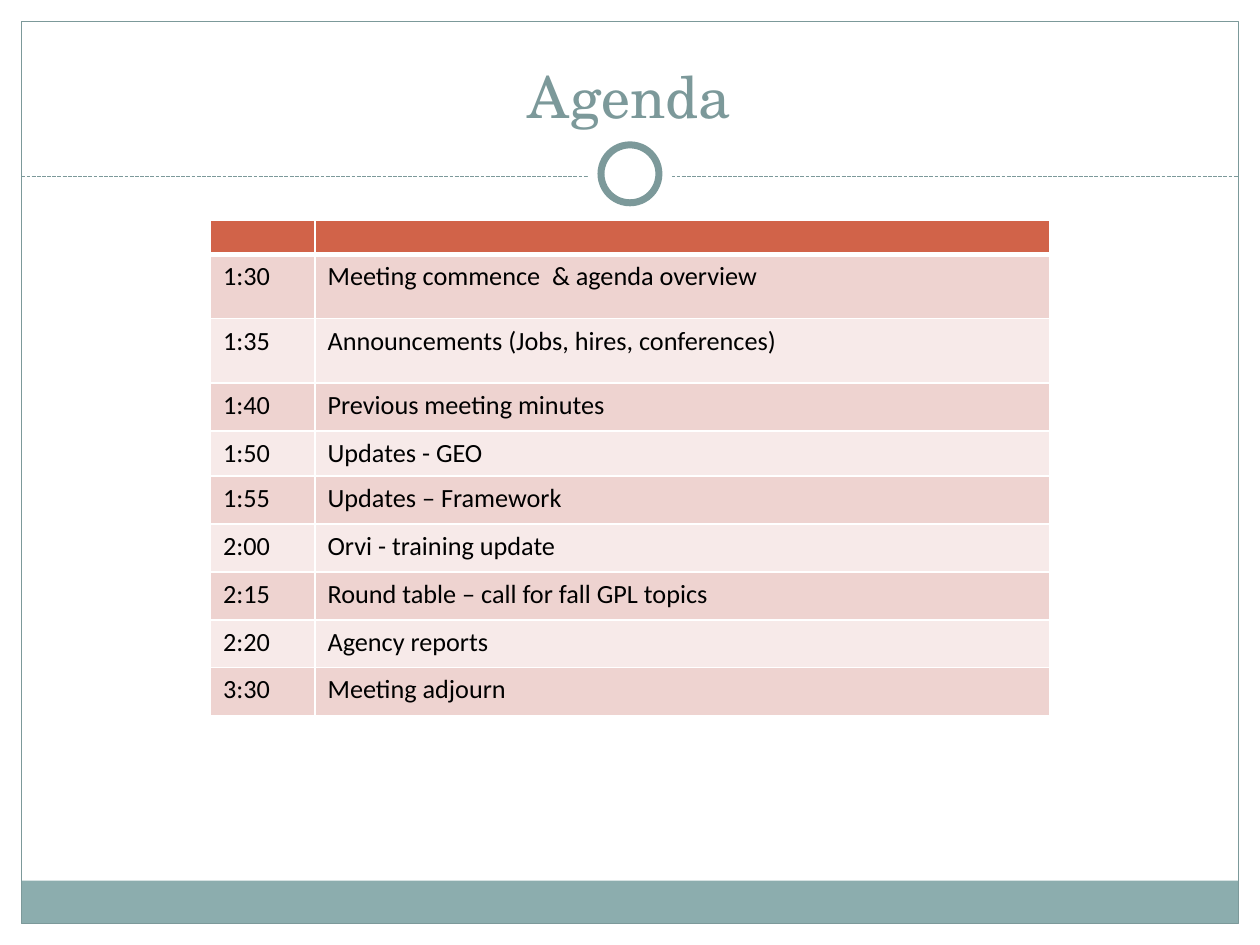
import pptx
import pptx.dml.color
import pptx.enum.dml
import pptx.enum.shapes
import pptx.enum.text
import pptx.oxml.ns
import pptx.util
from lxml import etree
from pptx.util import Inches

TITLE = "Agenda"
AGENDA = [
    ("1:30", "Meeting commence  & agenda overview"),
    ("1:35", "Announcements (Jobs, hires, conferences)"),
    ("1:40", "Previous meeting minutes"),
    ("1:50", "Updates - GEO"),
    ("1:55", "Updates – Framework"),
    ("2:00", "Orvi - training update"),
    ("2:15", "Round table – call for fall GPL topics"),
    ("2:20", "Agency reports"),
    ("3:30", "Meeting adjourn"),
]
HEADER_HEIGHT, ROW_HEIGHT = 0.27, 0.38
SPECIAL_HEIGHTS = {"1:30": 0.51, "1:35": 0.51, "1:50": 0.36}
COLUMN_WIDTHS = (0.83, 5.83)
TABLE_LEFT, TABLE_TOP = 1.67, 1.75

SLIDE_WIDTH, SLIDE_HEIGHT = 10, 7.5
MARGIN = 0.17
RULE_Y = 1.4
FOOTER_HEIGHT = 0.34
RING_CENTER_Y = 1.38

THEME = {
    "accent": "7C999A", "footer": "8CADAE", "paper": "FFFFFF", "ink": "000000",
    "header": "D16349", "bands": ("EED3D0", "F7EAE9"),
    "title_font": "TeX Gyre Schola", "body_font": "Calibri",
    "title_size": 33, "body_size": 15, "header_size": 10,
    "thin": 0.75, "ring": 4, "cell_line": 1, "header_line": 3,
}


def rgb(value):
    return pptx.dml.color.RGBColor.from_string(value)


def write(frame, text, *, font, size, color, align=None):
    paragraph = frame.paragraphs[0]
    paragraph.alignment = align
    run = paragraph.add_run()
    run.text = text
    run.font.name = font
    run.font.size = pptx.util.Pt(size)
    run.font.color.rgb = rgb(color)


def add_shape(slide, kind, left, top, width, height, fill=None, line=None, weight=None):
    shape = slide.shapes.add_shape(kind, *map(Inches, (left, top, width, height)))
    shape.shadow.inherit = False
    if fill:
        shape.fill.solid()
        shape.fill.fore_color.rgb = rgb(fill)
    else:
        shape.fill.background()
    if line:
        shape.line.color.rgb = rgb(line)
        shape.line.width = pptx.util.Pt(weight)
    else:
        shape.line.fill.background()


def add_rule(slide):
    rule = slide.shapes.add_connector(
        pptx.enum.shapes.MSO_CONNECTOR.STRAIGHT, Inches(MARGIN), Inches(RULE_Y),
        Inches(SLIDE_WIDTH - MARGIN), Inches(RULE_Y))
    rule.line.color.rgb = rgb(THEME["accent"])
    rule.line.width = pptx.util.Pt(THEME["thin"])
    rule.line.dash_style = pptx.enum.dml.MSO_LINE.SQUARE_DOT
    etree.SubElement(rule._element.spPr, pptx.oxml.ns.qn("a:effectLst"))


def add_frame(slide):
    shapes = pptx.enum.shapes.MSO_SHAPE
    inner_width = SLIDE_WIDTH - 2 * MARGIN
    inner_height = SLIDE_HEIGHT - 2 * MARGIN
    add_shape(slide, shapes.RECTANGLE, MARGIN, SLIDE_HEIGHT - MARGIN - FOOTER_HEIGHT,
              inner_width, FOOTER_HEIGHT, fill=THEME["footer"])
    add_shape(slide, shapes.RECTANGLE, MARGIN, MARGIN, inner_width, inner_height,
              line=THEME["accent"], weight=THEME["thin"])
    add_rule(slide)
    for diameter, line in ((0.67, None), (0.46, THEME["accent"])):
        add_shape(slide, shapes.OVAL, (SLIDE_WIDTH - diameter) / 2,
                  RING_CENTER_Y - diameter / 2, diameter, diameter,
                  fill=THEME["paper"], line=line, weight=THEME["ring"])


def style_cell(cell, fill, top, bottom):
    """Set the borders, then the fill, in the order the file format asks for."""
    qn = pptx.oxml.ns.qn
    properties = cell._tc.get_or_add_tcPr()
    side = THEME["cell_line"]
    for tag, weight in (("a:lnL", side), ("a:lnR", side), ("a:lnT", top), ("a:lnB", bottom)):
        line = etree.SubElement(properties, qn(tag), w=str(pptx.util.Pt(weight)))
        solid = etree.SubElement(line, qn("a:solidFill"))
        etree.SubElement(solid, qn("a:srgbClr"), val=THEME["paper"])
    cell.fill.solid()
    cell.fill.fore_color.rgb = rgb(fill)


def add_agenda(slide):
    heights = [HEADER_HEIGHT] + [SPECIAL_HEIGHTS.get(time, ROW_HEIGHT) for time, _ in AGENDA]
    table = slide.shapes.add_table(
        len(heights), len(COLUMN_WIDTHS), Inches(TABLE_LEFT), Inches(TABLE_TOP),
        Inches(sum(COLUMN_WIDTHS)), Inches(sum(heights))).table
    for column, width in zip(table.columns, COLUMN_WIDTHS):
        column.width = Inches(width)
    for row, height in zip(table.rows, heights):
        row.height = Inches(height)

    thin, thick = THEME["cell_line"], THEME["header_line"]
    for cell in table.rows[0].cells:
        style_cell(cell, THEME["header"], thin, thick)
        etree.SubElement(cell.text_frame.paragraphs[0]._p, pptx.oxml.ns.qn("a:endParaRPr"),
                         sz=str(THEME["header_size"] * 100))
    for index, entry in enumerate(AGENDA):
        for column, text in enumerate(entry):
            cell = table.cell(index + 1, column)
            style_cell(cell, THEME["bands"][index % 2], thin if index else thick, thin)
            write(cell.text_frame, text, font=THEME["body_font"],
                  size=THEME["body_size"], color=THEME["ink"])


def add_title(slide):
    title = slide.shapes.title
    title.left, title.top, title.width, title.height = map(Inches, (0.33, 0.25, 9.33, 0.83))
    title.text_frame.vertical_anchor = pptx.enum.text.MSO_ANCHOR.BOTTOM
    write(title.text_frame, TITLE, font=THEME["title_font"], size=THEME["title_size"],
          color=THEME["accent"], align=pptx.enum.text.PP_ALIGN.CENTER)


def main():
    deck = pptx.Presentation()
    deck.slide_width, deck.slide_height = Inches(SLIDE_WIDTH), Inches(SLIDE_HEIGHT)
    slide = deck.slides.add_slide(deck.slide_layouts.get_by_name("Title Only"))
    add_frame(slide)
    add_title(slide)
    add_agenda(slide)
    deck.save("out.pptx")


if __name__ == "__main__":
    main()
